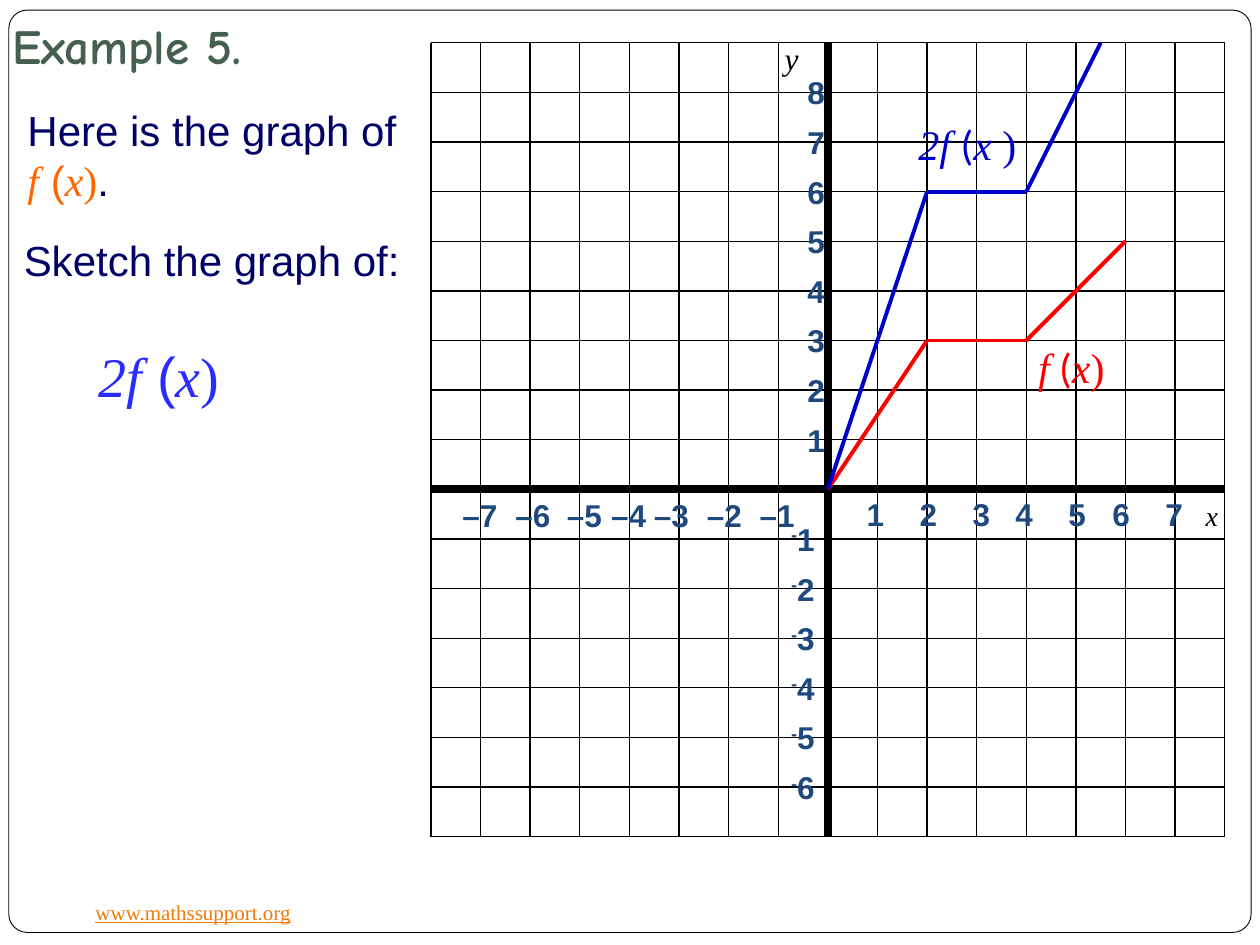
from dataclasses import dataclass

from lxml.etree import SubElement
from pptx import Presentation
from pptx.dml.color import RGBColor
from pptx.enum.shapes import MSO_CONNECTOR, MSO_SHAPE
from pptx.enum.text import MSO_ANCHOR, MSO_AUTO_SIZE, PP_ALIGN
from pptx.oxml.ns import qn
from pptx.util import Inches, Pt

WIDTH, HEIGHT = 10, 7.5
CELLS = 16
GRID_LEFT, GRID_TOP, CELL = 3.42, 0.34, 6.3 / CELLS
ORIGIN_COLUMN, ORIGIN_ROW = 8, 9


@dataclass(frozen=True)
class Theme:
    """Colours, fonts and type sizes of the slide."""
    ink: str = "000000"
    paper: str = "FFFFFF"
    title: str = "455F51"
    body: str = "010066"
    accent: str = "FF6600"
    link: str = "EE7B08"
    scale: str = "1F497D"
    base_curve: str = "FF0000"
    doubled_curve: str = "0000CC"
    task: str = "2B2BFF"
    sans: str = "Arial"
    serif: str = "Times New Roman"
    round: str = "Comic Neue"
    paren: str = "Calibri"
    title_size: int = 28
    body_size: int = 24
    task_size: int = 32
    scale_size: int = 18
    x_size: int = 16
    link_size: int = 12
    hairline: float = 0.75
    axis: float = 4.5
    curve: float = 2.25


THEME = Theme()


def share(left, top, width, height):
    """Turn percentages of the slide into a box in inches."""
    return (left * WIDTH / 100, top * HEIGHT / 100,
            width * WIDTH / 100, height * HEIGHT / 100)


def plot(x, y):
    """Turn graph coordinates into a point in inches."""
    return (GRID_LEFT + (ORIGIN_COLUMN + x) * CELL,
            GRID_TOP + (ORIGIN_ROW - y) * CELL)


def style(text, font, size, color, **formats):
    """Pair a piece of text with its format values."""
    return text, {"name": font, "size": Pt(size), **formats}, color


def formula(head, size, color, paren_font, variable="x"):
    """Return the styled pieces of a function of x."""
    return [style(head, THEME.serif, size, color, italic=True),
            style(" (", paren_font, size, color),
            style(variable, THEME.serif, size, color, italic=True),
            style(")", THEME.serif, size, color)]


def write(paragraph, pieces):
    """Add styled pieces to a paragraph and return their runs."""
    runs = []
    for text, formats, color in pieces:
        run = paragraph.add_run()
        run.text = text
        for key, value in formats.items():
            setattr(run.font, key, value)
        run.font.color.rgb = RGBColor.from_string(color)
        runs.append(run)
    return runs


def add_text(slide, box, pieces, wrap=True, tabs=()):
    """Add a text box, with centred tab stops where given."""
    label = slide.shapes.add_textbox(*map(Inches, box))
    frame = label.text_frame
    frame.word_wrap = wrap
    frame.auto_size = MSO_AUTO_SIZE.SHAPE_TO_FIT_TEXT
    paragraph = frame.paragraphs[0]
    if tabs:
        stops = SubElement(paragraph._p.get_or_add_pPr(), qn("a:tabLst"))
        for stop in tabs:
            SubElement(stops, qn("a:tab"), pos=str(Inches(stop)), algn="ctr")
    return write(paragraph, pieces)


def add_line(slide, start, end, color, weight):
    """Draw a straight line between two points in inches."""
    line = slide.shapes.add_connector(
        MSO_CONNECTOR.STRAIGHT, *map(Inches, (*start, *end)))
    line.line.color.rgb = RGBColor.from_string(color)
    line.line.width = Pt(weight)
    SubElement(line._element.spPr, qn("a:effectLst"))


def add_panel(slide, kind, box):
    """Add a plain white shape without an outline."""
    panel = slide.shapes.add_shape(kind, *map(Inches, box))
    panel.shadow.inherit = False
    panel.fill.solid()
    panel.fill.fore_color.rgb = RGBColor.from_string(THEME.paper)
    panel.line.fill.background()
    return panel


def add_frame(slide):
    """Draw the rounded border and the site address."""
    border = add_panel(slide, MSO_SHAPE.ROUNDED_RECTANGLE,
                       share(0.7, 1.07, 98.6, 97.6))
    border.adjustments[0] = 0.02
    border.line.color.rgb = RGBColor.from_string(THEME.ink)
    border.line.width = Pt(0.5)
    add_text(slide, share(6.6, 94.53, 17.7, 4),
             [style("www.mathssupport.org", THEME.serif, THEME.link_size,
                    THEME.link, underline=True)], wrap=False)


def add_title(slide):
    """Place and format the title."""
    title = slide.shapes.title
    edges = zip(("left", "top", "width", "height"), share(0, 2.4, 25.8, 6.8))
    for edge, length in edges:
        setattr(title, edge, Inches(length))
    frame = title.text_frame
    formats = {"vertical_anchor": MSO_ANCHOR.BOTTOM, "word_wrap": True,
               "margin_left": Inches(0.1), "margin_right": Inches(0.1),
               "margin_top": Inches(0.05), "margin_bottom": Inches(0.1)}
    for key, value in formats.items():
        setattr(frame, key, value)
    frame.paragraphs[0].alignment = PP_ALIGN.LEFT
    write(frame.paragraphs[0], [style("Example 5.", THEME.round,
                                      THEME.title_size, THEME.title, bold=True)])


def add_task(slide):
    """Write the instructions beside the graph."""
    body = (THEME.sans, THEME.body_size, THEME.body)
    add_text(slide, share(0.9, 24.13, 32.1, 6.67),
             [style("Sketch the graph of:", *body)], wrap=False)
    add_text(slide, share(1.2, 10.4, 31.4, 12.13),
             [style("Here is the graph of ", *body),
              *formula("f", THEME.body_size, THEME.accent, THEME.sans),
              style(".", *body)])
    add_text(slide, share(6.8, 35.47, 11.7, 8.53),
             formula("2f", THEME.task_size, THEME.task, THEME.sans), wrap=False)


def add_grid(slide):
    """Draw the y label, the square grid and both axes."""
    y_label = add_panel(slide, MSO_SHAPE.RECTANGLE, share(61.3, 3.47, 5.3, 7.33))
    y_label.text_frame.vertical_anchor = MSO_ANCHOR.TOP
    paragraph = y_label.text_frame.paragraphs[0]
    paragraph.alignment = PP_ALIGN.LEFT
    write(paragraph, [style("y", THEME.serif, THEME.scale_size, THEME.ink,
                            italic=True)])
    left, right = -ORIGIN_COLUMN, CELLS - ORIGIN_COLUMN
    bottom, top = ORIGIN_ROW - CELLS, ORIGIN_ROW
    columns = [((x, top), (x, bottom)) for x in range(left, right + 1)]
    rows = [((left, y), (right, y)) for y in range(bottom, top + 1)]
    axes = [((0, top), (0, bottom)), ((left, 0), (right, 0))]
    for lines, weight in ((columns + rows, THEME.hairline), (axes, THEME.axis)):
        for start, end in lines:
            add_line(slide, plot(*start), plot(*end), THEME.ink, weight)


def add_scales(slide):
    """Number both axes and name the x axis."""
    scale = (THEME.sans, THEME.scale_size, THEME.scale)
    add_text(slide, share(94.7, 52.13, 3.3, 5.33),
             [style("x", THEME.serif, THEME.x_size, THEME.ink, italic=True)])
    halves = (
        (share(65.8, 51.73, 32.7, 5.33), [str(n) for n in range(1, 8)],
         (0.27, 0.69, 1.11, 1.45, 1.87, 2.22, 2.64)),
        (share(33, 51.87, 32.8, 5.33), [f"–{n}" for n in range(7, 0, -1)],
         (0.41, 0.83, 1.24, 1.59, 1.93, 2.35, 2.77)))
    for box, numbers, tabs in halves:
        text = "".join(f"\t{number}" for number in numbers)
        add_text(slide, box, [style(text, *scale, bold=True)], tabs=tabs)
    for value in [*range(1, 9), *range(-1, -7, -1)]:
        axis_x, middle = plot(0, value)
        sign = [style("-", *scale, bold=True)] if value < 0 else []
        offset = 0.39 if sign else 0.26
        runs = add_text(slide, (axis_x - offset, middle - 0.2, 0.54, 0.4),
                        [*sign, style(str(abs(value)), *scale, bold=True)])
        if sign:
            runs[0].font._element.set("baseline", "30000")


def add_curve(slide, points, color, label_box, pieces):
    """Draw a graph of straight parts with its label."""
    add_text(slide, label_box, pieces, wrap=False)
    for start, end in zip(points, points[1:]):
        add_line(slide, plot(*start), plot(*end), color, THEME.curve)


def main():
    """Build and save the slide."""
    deck = Presentation()
    deck.slide_width, deck.slide_height = Inches(WIDTH), Inches(HEIGHT)
    slide = deck.slides.add_slide(deck.slide_layouts[5])
    add_frame(slide)
    title = slide.shapes.title._element
    title.getparent().append(title)
    add_title(slide)
    add_task(slide)
    add_grid(slide)
    add_scales(slide)
    add_curve(slide, [(0, 0), (2, 3), (4, 3), (6, 5)], THEME.base_curve,
              share(81.4, 35.47, 7.3, 6.67),
              formula("f", THEME.body_size, THEME.base_curve, THEME.paren))
    add_curve(slide, [(0, 0), (2, 6), (4, 6), (5.5, 9)], THEME.doubled_curve,
              share(71.9, 11.87, 9.9, 6.67),
              formula("2f", THEME.body_size, THEME.doubled_curve, THEME.paren, "x "))
    deck.save("out.pptx")


if __name__ == "__main__":
    main()
